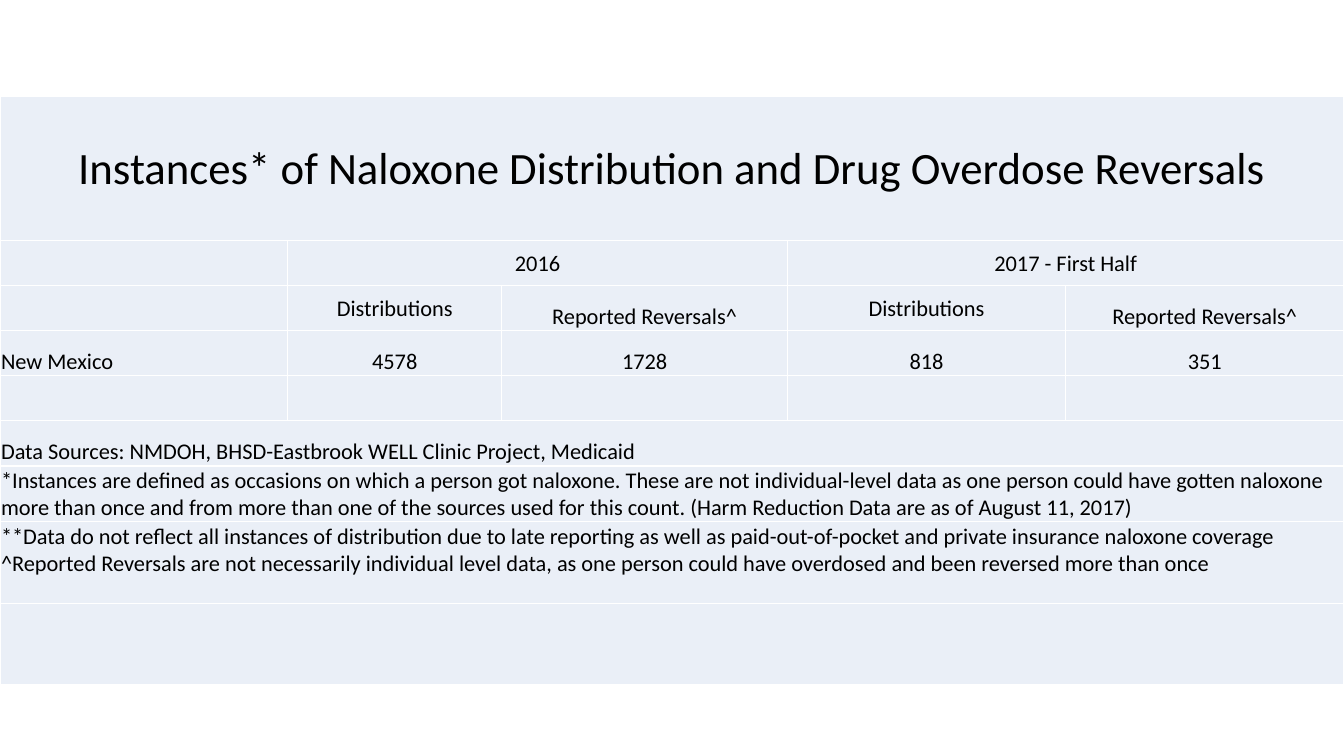
from lxml import etree
from pptx import Presentation
from pptx import util as u
from pptx.dml.color import RGBColor
from pptx.enum import text
from pptx.oxml import ns

PX = 9525
COLORS = {"cell": "EAEFF7", "border": "FFFFFF", "text": "000000"}
FONT = "Calibri"
COLUMNS = [274, 204, 272, 265, 265]
ROWS = [137] + [43] * 5 + [51, 78, 77]
MERGES = [(0, 0, 4), (1, 1, 2), (1, 3, 4)] + [(row, 0, 4) for row in range(5, 9)]
TOP, MIDDLE, BOTTOM = text.MSO_ANCHOR.TOP, text.MSO_ANCHOR.MIDDLE, text.MSO_ANCHOR.BOTTOM
LEFT, CENTER = text.PP_ALIGN.LEFT, text.PP_ALIGN.CENTER

TITLE = "Instances* of Naloxone Distribution and Drug Overdose Reversals"
PERIODS = ["2016", "2017 - First Half"]
MEASURES = [("Distributions", MIDDLE), ("Reported Reversals^", BOTTOM)]
STATE = "New Mexico"
COUNTS = ["4578", "1728", "818", "351"]
NOTES = [
    (["Data Sources: NMDOH, BHSD-Eastbrook WELL Clinic Project, Medicaid"], BOTTOM),
    (["*Instances are defined as occasions on which a person got naloxone. "
      "These are not individual-level data as one person could have gotten naloxone "
      "more than once and from more than one of the sources used for this count. "
      "(Harm Reduction Data are as of August 11, 2017)"], BOTTOM),
    (["**Data do not reflect all instances of distribution due to late reporting "
      "as well as paid-out-of-pocket and private insurance naloxone coverage",
      "^Reported Reversals are not necessarily individual level data, "
      "as one person could have overdosed and been reversed more than once"], TOP),
]


def style_cell(cell):
    """Give a cell its borders, fill and narrow margins."""
    properties = cell._tc.get_or_add_tcPr()
    for side in ("a:lnL", "a:lnR", "a:lnT", "a:lnB"):
        line = etree.SubElement(properties, ns.qn(side), w=str(u.Pt(1)))
        fill = etree.SubElement(line, ns.qn("a:solidFill"))
        etree.SubElement(fill, ns.qn("a:srgbClr"), val=COLORS["border"])
    cell.fill.solid()
    cell.fill.fore_color.rgb = RGBColor.from_string(COLORS["cell"])
    cell.margin_left = cell.margin_right = cell.margin_top = PX
    cell.margin_bottom = 0


def write_cell(cell, lines, anchor, align=CENTER, size=16):
    """Write one paragraph per line into a cell."""
    cell.vertical_anchor = anchor
    frame = cell.text_frame
    for index, line in enumerate(lines):
        para = frame.add_paragraph() if index else frame.paragraphs[0]
        para.alignment = align
        span = para.add_run()
        span.text = line
        span.font.name = FONT
        span.font.size = u.Pt(size)
        span.font.color.rgb = RGBColor.from_string(COLORS["text"])


def add_grid(page, left, top):
    """Add the empty styled table with its merged cells."""
    table = page.shapes.add_table(
        len(ROWS), len(COLUMNS), left * PX, top * PX, sum(COLUMNS) * PX, sum(ROWS) * PX
    ).table
    table.first_row = table.horz_banding = False
    for column, width in zip(table.columns, COLUMNS):
        column.width = width * PX
    for row, height in zip(table.rows, ROWS):
        row.height = height * PX
    for cell in table.iter_cells():
        style_cell(cell)
    for row, first, last in MERGES:
        table.cell(row, first).merge(table.cell(row, last))
    return table


def fill_counts(table):
    """Write the title, the two header rows and the counts."""
    write_cell(table.cell(0, 0), [TITLE], MIDDLE, size=32)
    for index, period in enumerate(PERIODS):
        start = 1 + index * len(MEASURES)
        write_cell(table.cell(1, start), [period], MIDDLE)
        for offset, (measure, anchor) in enumerate(MEASURES):
            write_cell(table.cell(2, start + offset), [measure], anchor)
    write_cell(table.cell(3, 0), [STATE], BOTTOM, LEFT)
    for column, count in enumerate(COUNTS, 1):
        write_cell(table.cell(3, column), [count], BOTTOM)


def fill_notes(table):
    """Write the source and footnote rows."""
    for row, (lines, anchor) in enumerate(NOTES, 5):
        write_cell(table.cell(row, 0), lines, anchor, LEFT)


def main():
    """Build the deck and save it."""
    deck = Presentation()
    deck.slide_width, deck.slide_height = 1280 * PX, 720 * PX
    page = deck.slides.add_slide(deck.slide_layouts[6])
    table = add_grid(page, 0, 92)
    fill_counts(table)
    fill_notes(table)
    deck.save("out.pptx")


if __name__ == "__main__":
    main()
